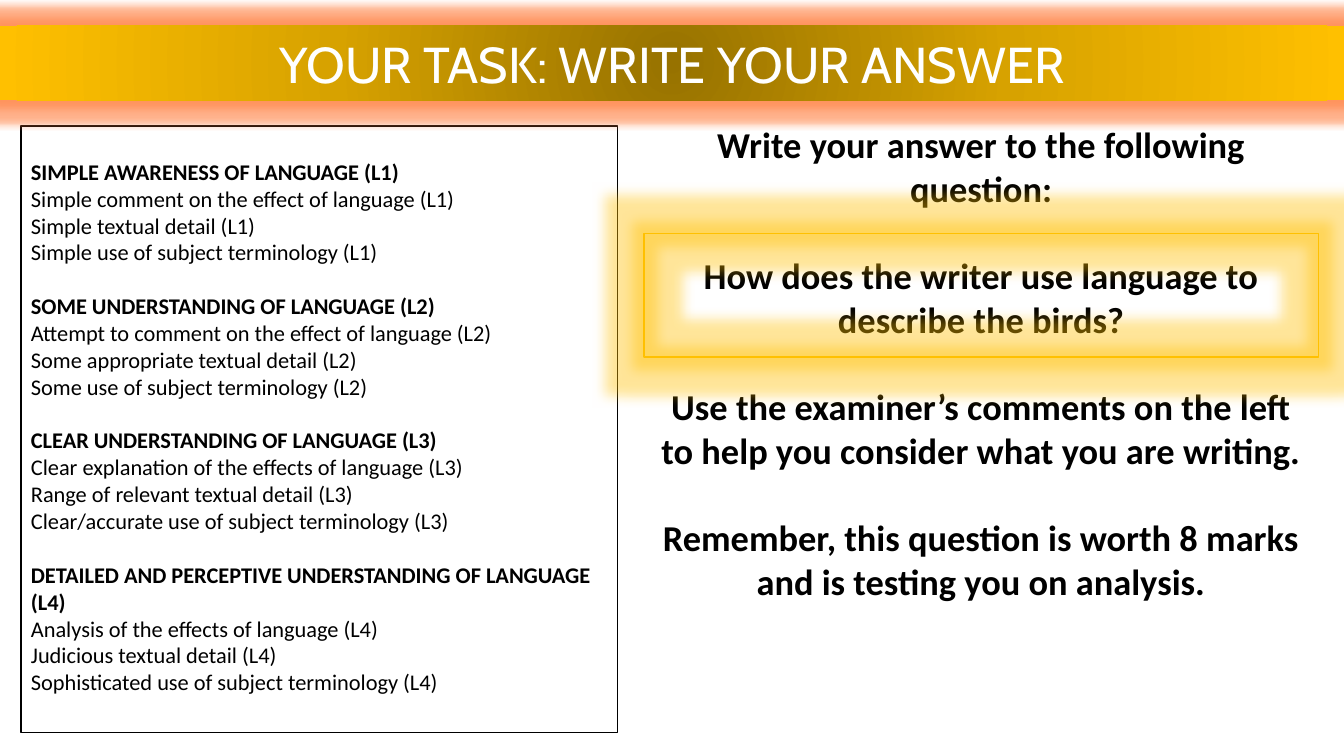
from dataclasses import dataclass

from lxml import etree
from pptx import Presentation
from pptx.dml.color import RGBColor
from pptx.enum.shapes import MSO_SHAPE
from pptx.enum.text import MSO_ANCHOR, PP_ALIGN
from pptx.oxml import parse_xml
from pptx.oxml.ns import qn
from pptx.util import Pt

RECT = MSO_SHAPE.RECTANGLE
LEFT, CENTER = PP_ALIGN.LEFT, PP_ALIGN.CENTER
TOP, MIDDLE = MSO_ANCHOR.TOP, MSO_ANCHOR.MIDDLE


@dataclass(frozen=True)
class Theme:
    black: str = "000000"
    white: str = "FFFFFF"
    gold: str = "FFC000"
    banner_glow: str = "FF8040"
    banner_stops: tuple = ((0, "977200"), (50, "D7A200"), (100, "FFC000"))
    body_font: str = "Calibri"
    title_font: str = "Cabin"
    level_size: float = 16
    task_size: float = 26
    title_size: float = 36


@dataclass(frozen=True)
class Box:
    left: float
    top: float
    width: float
    height: float


@dataclass(frozen=True)
class Level:
    number: int
    heading: str
    criteria: tuple


T = Theme()
LINE_RATIO = 1.2  # line height relative to type size
INSET = 3.6

BANNER = Box(0, 18.5, 960, 53)
LEVELS_BOX = Box(15, 90, 426.25, 433.5)
TASK_BOX = Box(460, 84, 481.75, 353.5)
QUESTION_FRAME = Box(460, 167, 481.75, 88)

LEVELS = (
    Level(1, "SIMPLE AWARENESS OF LANGUAGE",
          ("Simple comment on the effect of language", "Simple textual detail",
           "Simple use of subject terminology")),
    Level(2, "SOME UNDERSTANDING OF LANGUAGE",
          ("Attempt to comment on the effect of language", "Some appropriate textual detail",
           "Some use of subject terminology")),
    Level(3, "CLEAR UNDERSTANDING OF LANGUAGE",
          ("Clear explanation of the effects of language", "Range of relevant textual detail",
           "Clear/accurate use of subject terminology")),
    Level(4, "DETAILED AND PERCEPTIVE UNDERSTANDING OF LANGUAGE",
          ("Analysis of the effects of language", "Judicious textual detail",
           "Sophisticated use of subject terminology")),
)
TASKS = (
    "Write your answer to the following question:",
    "How does the writer use language to describe the birds?",
    "Use the examiner’s comments on the left to help you consider what you are writing.",
    "Remember, this question is worth 8 marks and is testing you on analysis.",
)


def add_box(s, box: Box, line: str | None = None, weight: float = 0.75,
            anchor=TOP, top_inset: float = INSET):
    sp = s.shapes.add_shape(RECT, Pt(box.left), Pt(box.top), Pt(box.width), Pt(box.height))
    sp.shadow.inherit = False
    sp.fill.background()
    if line:
        sp.line.color.rgb = RGBColor.from_string(line)
        sp.line.width = Pt(weight)
    else:
        sp.line.fill.background()
    tf = sp.text_frame
    tf.word_wrap = True
    tf.vertical_anchor = anchor
    tf.margin_top = Pt(top_inset)
    return sp


def add_text(tf, text: str, *, size: float, font: str = T.body_font, color: str = T.black,
             bold: bool = False, align=LEFT, before: float = 0) -> None:
    p = tf.paragraphs[0]
    if p.runs:
        p = tf.add_paragraph()
    p.alignment = align
    p.space_before = Pt(before)
    r = p.add_run()
    r.text = text
    r.font.name = font
    r.font.size = Pt(size)
    r.font.bold = bold
    r.font.color.rgb = RGBColor.from_string(color)


def add_glow(sp, color: str, radius: float, opacity: int) -> None:
    effects = sp._element.spPr.find(qn("a:effectLst"))
    glow = etree.SubElement(effects, qn("a:glow"), rad=str(Pt(radius)))
    clr = etree.SubElement(glow, qn("a:srgbClr"), val=color)
    etree.SubElement(clr, qn("a:alpha"), val=str(opacity * 1000))


def fill_radial(sp, stops: tuple) -> None:
    gs = "".join(f'<a:gs pos="{pos * 1000}"><a:srgbClr val="{color}"/></a:gs>'
                 for pos, color in stops)
    grad = parse_xml(
        '<a:gradFill xmlns:a="http://schemas.openxmlformats.org/drawingml/2006/main">'
        f'<a:gsLst>{gs}</a:gsLst><a:path path="circle">'
        '<a:fillToRect l="50000" t="50000" r="50000" b="50000"/></a:path></a:gradFill>')
    spPr = sp._element.spPr
    spPr.replace(spPr.find(qn("a:noFill")), grad)


def add_levels(s) -> None:
    gap = T.level_size * LINE_RATIO
    tf = add_box(s, LEVELS_BOX, T.black, top_inset=INSET + gap).text_frame
    for i, level in enumerate(LEVELS):
        add_text(tf, f"{level.heading} (L{level.number})", size=T.level_size, bold=True,
                 before=gap if i else 0)
        for criterion in level.criteria:
            add_text(tf, f"{criterion} (L{level.number})", size=T.level_size)


def add_tasks(s) -> None:
    gap = T.task_size * LINE_RATIO
    tf = add_box(s, TASK_BOX, T.white).text_frame
    for i, task in enumerate(TASKS):
        add_text(tf, task, size=T.task_size, bold=True, align=CENTER, before=gap if i else 0)


def add_banner(s) -> None:
    sp = add_box(s, BANNER, anchor=MIDDLE)
    fill_radial(sp, T.banner_stops)
    add_glow(sp, T.banner_glow, 11, 60)
    add_text(sp.text_frame, "YOUR TASK: WRITE YOUR ANSWER", size=T.title_size,
             font=T.title_font, color=T.white, align=CENTER)


def main() -> None:
    prs = Presentation()
    prs.slide_width, prs.slide_height = Pt(960), Pt(540)
    s = prs.slides.add_slide(prs.slide_layouts[6])

    # Examiner's comments on the left, task on the right
    add_levels(s)
    add_tasks(s)

    # Title banner
    add_banner(s)

    # Glowing frame around the question
    frame = add_box(s, QUESTION_FRAME, T.gold, weight=1)
    add_glow(frame, T.gold, 18, 40)

    prs.save("out.pptx")


if __name__ == "__main__":
    main()
